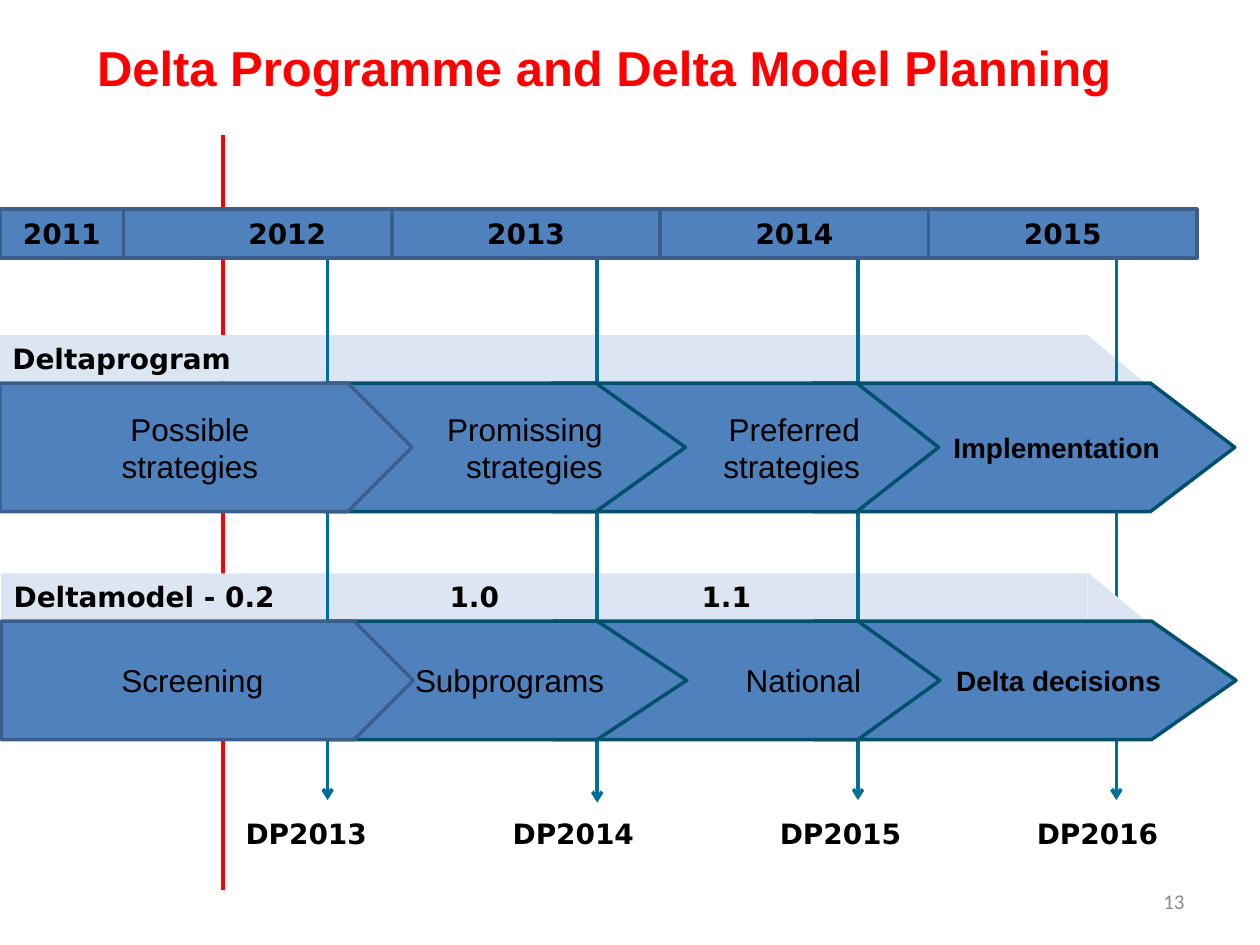
from pptx import Presentation
from pptx import util as u
from pptx.dml.color import RGBColor
from pptx.enum import shapes, text
from pptx.oxml.ns import qn
from lxml import etree

LEFT, CENTER, RIGHT = text.PP_ALIGN.LEFT, text.PP_ALIGN.CENTER, text.PP_ALIGN.RIGHT
TOP, MIDDLE = text.MSO_ANCHOR.TOP, text.MSO_ANCHOR.MIDDLE
KIND = shapes.MSO_SHAPE


def color(value):
    """Turn a hex string into a colour."""
    return RGBColor.from_string(value)


class Planner:
    """Holds the style of the planning slide and draws its elements."""

    blue, pale, red, teal = "4F81BD", "DCE6F2", "FF0000", "006E96"
    navy, petrol, black, gray = "3A5F8C", "02506D", "000000", "8C8C8C"
    sans, label = "Arial", "DejaVu Sans"

    def __init__(self, deck):
        """Add a title-only page."""
        self.page = deck.slides.add_slide(deck.slide_layouts[5])

    def fill_text(self, box, words, font, size, ink=black, bold=False, align=LEFT,
                  anchor=MIDDLE, right=0.1, tabs=()):
        """Fill a box with formatted text."""
        frame = box.text_frame
        frame.text = words
        frame.word_wrap = True
        frame.auto_size = text.MSO_AUTO_SIZE.NONE
        frame.vertical_anchor = anchor
        frame.margin_left, frame.margin_right = u.Inches(0.1), u.Inches(right)
        frame.margin_top = frame.margin_bottom = u.Inches(0.05)
        for para in frame.paragraphs:
            para.alignment = align
            if tabs:
                stops = etree.SubElement(para._p.get_or_add_pPr(), qn("a:tabLst"))
                for tab in tabs:
                    etree.SubElement(stops, qn("a:tab"), pos=str(u.Inches(tab)), algn="l")
            for span in para.runs:
                span.font.name, span.font.size = font, u.Pt(size)
                span.font.bold = bold
                span.font.color.rgb = color(ink)

    def title(self, words, *place):
        """Place and format the title."""
        box = self.page.shapes.title
        box.left, box.top, box.width, box.height = map(u.Inches, place)
        self.fill_text(box, words, self.sans, 28, self.red, True, anchor=TOP)

    def text_box(self, words, place, *style, **options):
        """Add a free text box."""
        box = self.page.shapes.add_textbox(*map(u.Inches, place))
        self.fill_text(box, words, *style, **options)

    def shape(self, kind, place, fill, line=None):
        """Add a flat preset shape."""
        box = self.page.shapes.add_shape(kind, *map(u.Inches, place))
        box.shadow.inherit = False
        box.fill.solid()
        box.fill.fore_color.rgb = color(fill)
        if line:
            box.line.color.rgb = color(line)
            box.line.width = u.Pt(2)
        else:
            box.line.fill.background()
        return box

    def vertical(self, x, top, bottom, ink, width, arrow=False):
        """Add a vertical line, with an arrowhead below if asked."""
        line = self.page.shapes.add_connector(
            shapes.MSO_CONNECTOR.STRAIGHT, *map(u.Inches, (x, top, x, bottom)))
        line.line.color.rgb = color(ink)
        line.line.width = u.Pt(width)
        properties = line._element.spPr
        if arrow:
            etree.SubElement(properties.find(qn("a:ln")), qn("a:tailEnd"), type="arrow")
        etree.SubElement(properties, qn("a:effectLst"))

    def band(self, words, left, top, tabs=()):
        """Add the pale heading band of a row."""
        box = self.shape(KIND.RECTANGLE, (left, top, 8.62, 0.37), self.pale)
        self.fill_text(box, words, self.label, 16, bold=True, anchor=TOP, tabs=tabs)

    def band_tip(self, left, top):
        """Add the sloping end of a band."""
        self.shape(KIND.RIGHT_TRIANGLE, (left + 8.62, top - 0.01, 0.47, 0.39), self.pale)

    def year(self, words, left, width):
        """Add one year of the time bar."""
        box = self.shape(KIND.RECTANGLE, (left, 1.66, width, 0.39), self.blue, self.navy)
        self.fill_text(box, words, self.label, 16, bold=True, align=CENTER)

    def stage(self, words, place, depth, line, **style):
        """Add one pentagon whose point has the given depth."""
        box = self.shape(KIND.PENTAGON, place, self.blue, line)
        box.adjustments[0] = depth / place[3]
        self.fill_text(box, words, self.sans, **style)


def main():
    """Build the planning slide."""
    deck = Presentation()
    deck.slide_width, deck.slide_height = u.Inches(10), u.Inches(7.5)
    plan = Planner(deck)
    plan.title("Delta Programme and Delta Model Planning", 0.67, 0.25, 8.82, 0.57)

    plan.vertical(1.77, 1.07, 7.06, plan.red, 2.5)
    plan.band("Deltamodel - 0.2\t1.0\t1.1", 0.01, 4.55, (3.46, 5.46))
    plan.band("Deltaprogram", 0, 2.66)
    plan.band_tip(0, 2.66)
    for x, top in ((2.6, 2.04), (4.74, 2.06), (6.81, 2.04), (8.86, 2.04)):
        plan.vertical(x, top, top + 4.31, plan.teal, 2, arrow=True)
    plan.band_tip(0.01, 4.55)

    plan.year("2011", 0, 0.98)
    plan.year("2012", 0.98, 2.6)
    for index in range(3):
        plan.year(str(2013 + index), 3.11 + 2.13 * index, 2.13)

    late = dict(line=plan.petrol, size=16, bold=True, align=RIGHT, right=0.26)
    middle = dict(line=plan.petrol, size=18, align=RIGHT, right=0.3)
    first = dict(line=plan.navy, size=18, align=CENTER)
    rows = (
        (0, 3.04, 1.02, ("Implementation", "Preferred\nstrategies",
                         "Promissing strategies", "Possible\nstrategies")),
        (0.01, 4.93, 0.94, ("Delta decisions", "National", "Subprograms", "Screening")),
    )
    for shift, top, height, names in rows:
        stages = ((6.45, 3.35, 0.67, late), (4.38, 3.07, 0.65, middle),
                  (2.58, 2.86, 0.71, middle), (0, 3.27, height / 2, first))
        for words, (left, width, depth, style) in zip(names, stages):
            plan.stage(words, (left + shift, top, width, height), depth, **style)

    plan.text_box("DP2013\tDP2014\tDP2015\tDP2016", (1.85, 6.43, 8.15, 0.37),
                  plan.label, 16, bold=True, tabs=(2.12, 4.24, 6.28))
    plan.text_box("13", (7.17, 6.95, 2.33, 0.4), "Calibri", 12, plan.gray, align=RIGHT)
    deck.save("out.pptx")


if __name__ == "__main__":
    main()
